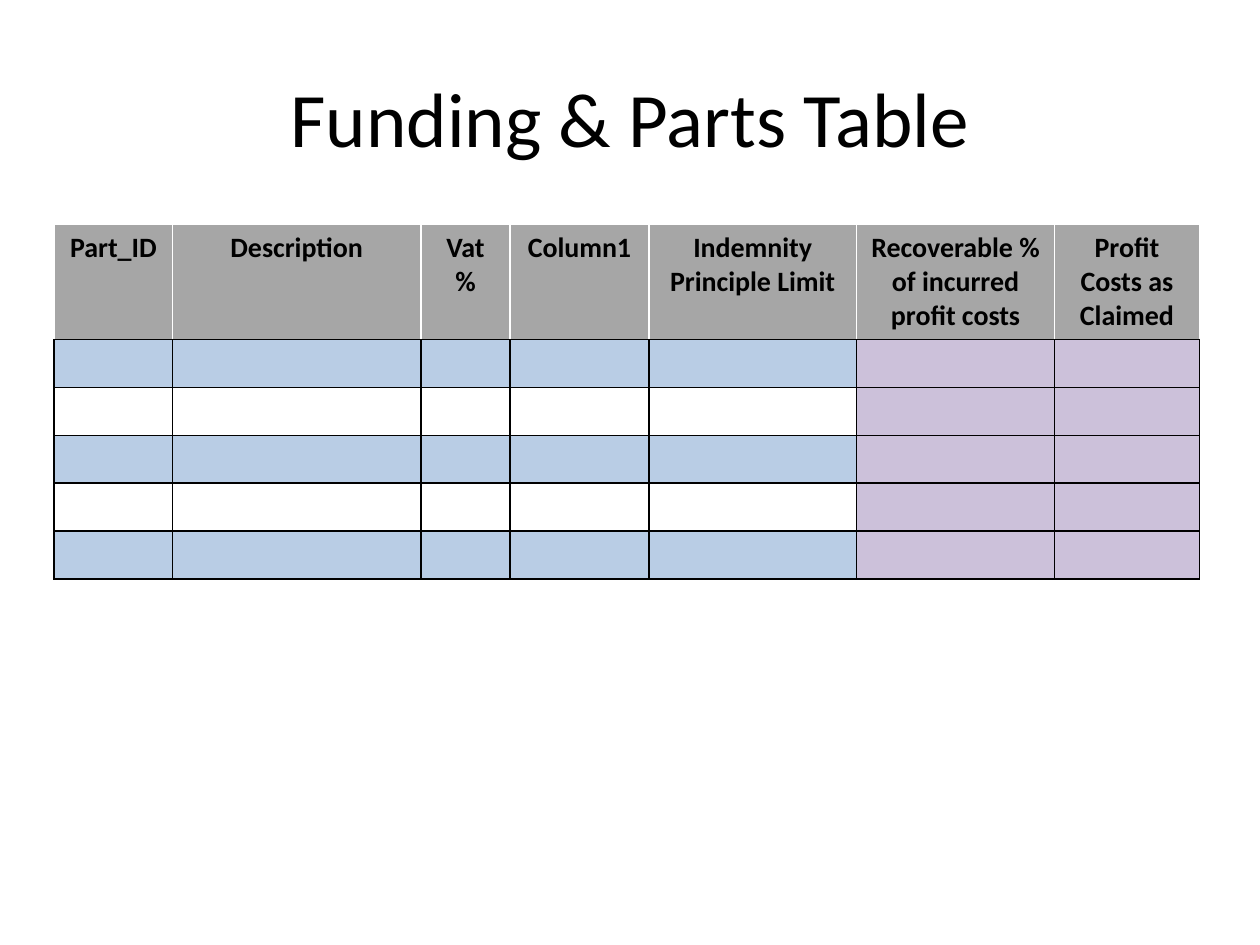
import dataclasses

import pptx
import pptx.dml.color
import pptx.enum.text
import pptx.oxml
import pptx.oxml.ns
import pptx.table
import pptx.util
from pptx.util import Inches


@dataclasses.dataclass(frozen=True)
class Theme:
    font: str = "Calibri"
    title_size: int = 44
    header_size: int = 16
    border_width: int = 1
    text: str = "000000"
    grid: str = "000000"
    header_grid: str = "FFFFFF"
    header: str = "A6A6A6"
    band: str = "B9CDE5"
    plain: str = "FFFFFF"
    cost: str = "CCC1DA"


@dataclasses.dataclass(frozen=True)
class Column:
    heading: str
    width: float
    is_cost: bool = False


THEME = Theme()
COLUMNS = [
    Column("Part_ID", 0.94),
    Column("Description", 1.97),
    Column("Vat %", 0.71),
    Column("Column1", 1.1),
    Column("Indemnity Principle Limit", 1.65),
    Column("Recoverable % of incurred profit costs", 1.57, is_cost=True),
    Column("Profit Costs as Claimed", 1.15, is_cost=True),
]
BODY_ROWS = 5
HEADER_HEIGHT, ROW_HEIGHT = 0.9, 0.38


def rgb(color: str) -> pptx.dml.color.RGBColor:
    return pptx.dml.color.RGBColor.from_string(color)


def format_paragraph(p, size: int, bold: bool) -> None:
    p.alignment = pptx.enum.text.PP_ALIGN.CENTER
    p.font.name = THEME.font
    p.font.size = pptx.util.Pt(size)
    p.font.bold = bold
    p.font.color.rgb = rgb(THEME.text)


def style_cell(cell: pptx.table._Cell, fill: str, sides: str, bottom: str) -> None:
    """Fill a cell; sides colours its left, right and top borders."""
    cell.fill.solid()
    cell.fill.fore_color.rgb = rgb(fill)
    tc_pr = cell._tc.get_or_add_tcPr()
    width = pptx.util.Pt(THEME.border_width)
    for i, (edge, color) in enumerate(zip("LRTB", (sides, sides, sides, bottom))):
        ln = pptx.oxml.parse_xml(
            f'<a:ln{edge} {pptx.oxml.ns.nsdecls("a")} w="{width}"><a:solidFill>'
            f'<a:srgbClr val="{color}"/></a:solidFill></a:ln{edge}>'
        )
        tc_pr.insert(i, ln)


def add_title(slide, text: str) -> None:
    title = slide.shapes.title
    title.left, title.top = Inches(0.5), Inches(0.3)
    title.width, title.height = Inches(9), Inches(1.25)
    tf = title.text_frame
    tf.text = text
    tf.vertical_anchor = pptx.enum.text.MSO_ANCHOR.MIDDLE
    format_paragraph(tf.paragraphs[0], THEME.title_size, bold=False)


def add_parts_table(slide) -> None:
    width = sum(column.width for column in COLUMNS)
    height = HEADER_HEIGHT + BODY_ROWS * ROW_HEIGHT
    table = slide.shapes.add_table(
        BODY_ROWS + 1, len(COLUMNS),
        Inches(0.43), Inches(1.78), Inches(width), Inches(height),
    ).table
    table.first_row = table.horz_banding = False
    for i, row in enumerate(table.rows):
        row.height = Inches(ROW_HEIGHT if i else HEADER_HEIGHT)

    for col, column in enumerate(COLUMNS):
        table.columns[col].width = Inches(column.width)

        # Heading
        cell = table.cell(0, col)
        cell.text = column.heading
        format_paragraph(cell.text_frame.paragraphs[0], THEME.header_size, bold=True)
        style_cell(cell, THEME.header, THEME.header_grid, THEME.grid)

        # Empty body cells: cost columns are solid, the others banded
        for row in range(1, BODY_ROWS + 1):
            band = THEME.band if row % 2 else THEME.plain
            cell = table.cell(row, col)
            cell.margin_top = cell.margin_bottom = Inches(0.03)
            style_cell(cell, THEME.cost if column.is_cost else band, THEME.grid, THEME.grid)


def main() -> None:
    prs = pptx.Presentation()
    prs.slide_width, prs.slide_height = Inches(10), Inches(7.5)
    slide = prs.slides.add_slide(prs.slide_layouts[5])  # Title Only
    add_title(slide, "Funding & Parts Table")
    add_parts_table(slide)
    prs.save("out.pptx")


if __name__ == "__main__":
    main()
